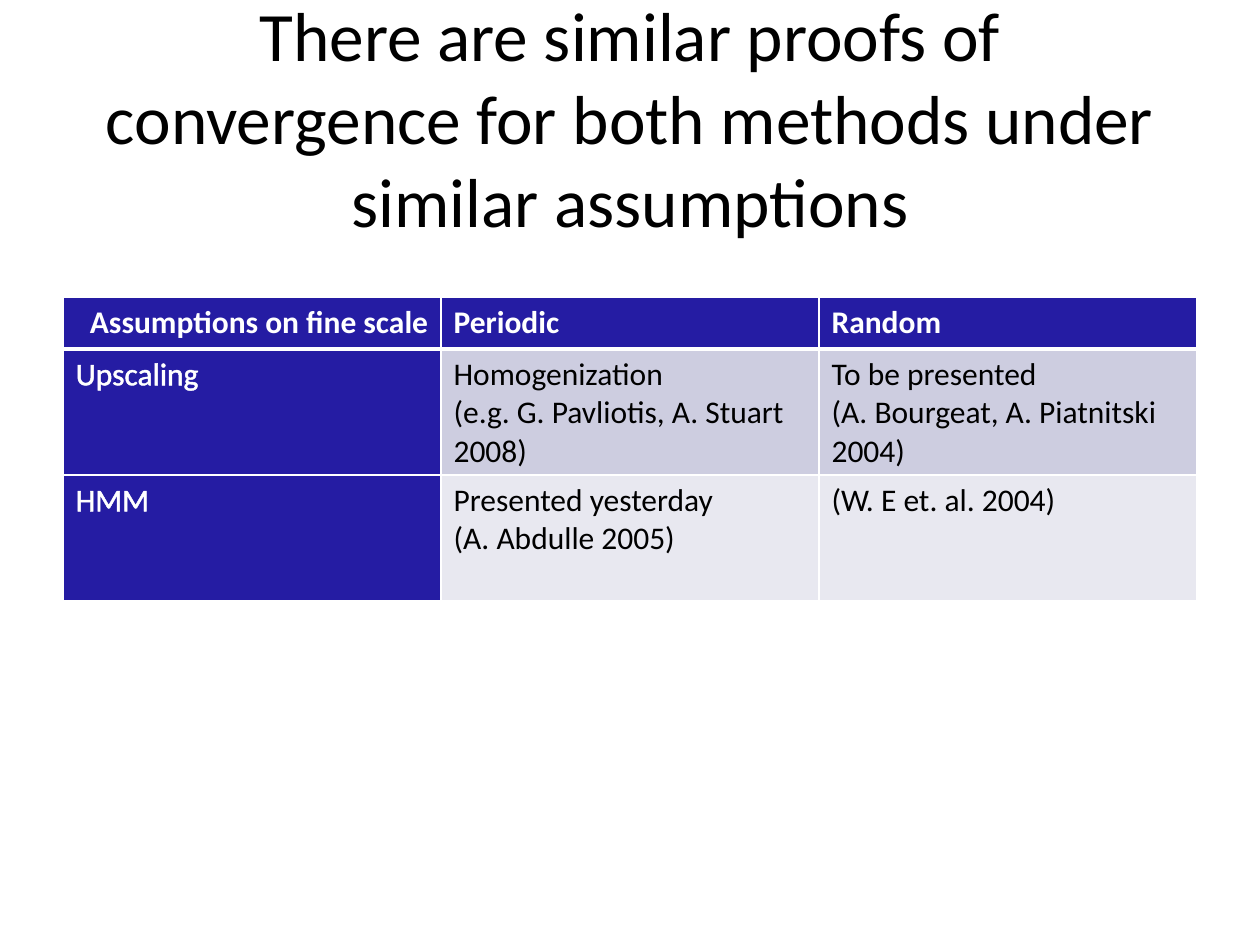
"""Build the slide on convergence proofs with its table of assumptions."""
from lxml import etree
from pptx import Presentation
from pptx.dml.color import RGBColor
from pptx.enum.text import MSO_ANCHOR, PP_ALIGN
from pptx.oxml.ns import qn
from pptx.util import Inches, Pt

LEFT, CENTER, RIGHT = PP_ALIGN.LEFT, PP_ALIGN.CENTER, PP_ALIGN.RIGHT
MIDDLE = MSO_ANCHOR.MIDDLE
WHITE = RGBColor(0xFF, 0xFF, 0xFF)
BLACK = RGBColor(0, 0, 0)
NAVY = RGBColor(0x25, 0x1C, 0xA3)
BANDS = [RGBColor(0xCD, 0xCD, 0xE0), RGBColor(0xE8, 0xE8, 0xF0)]

TITLE = "There are similar proofs of convergence for both methods under similar assumptions"
ROWS = [
    ["Assumptions on fine scale", "Periodic", "Random"],
    ["Upscaling", "Homogenization\n(e.g. G. Pavliotis, A. Stuart 2008)",
     "To be presented\n(A. Bourgeat, A. Piatnitski 2004)"],
    ["HMM", "Presented yesterday\n(A. Abdulle 2005)", "(W. E et. al. 2004)"],
]
HEIGHTS = [0.41, 1, 1]
WIDTH = 9


def make_line(tag, color, width):
    line = etree.Element(qn(tag), w=str(Pt(width)))
    fill = etree.SubElement(line, qn("a:solidFill"))
    etree.SubElement(fill, qn("a:srgbClr"), val=str(color))
    return line


def put_text(frame, text, size=18, color=BLACK, bold=False, align=LEFT, edge=0):
    frame.word_wrap = True
    for i, words in enumerate(text.split("\n")):
        para = frame.add_paragraph() if i else frame.paragraphs[0]
        para.alignment = align
        run = para.add_run()
        run.text = words
        font = run.font
        font.name, font.size, font.bold = "Calibri", Pt(size), bold
        font.color.rgb = color
        if edge:
            run._r.get_or_add_rPr().insert(0, make_line("a:ln", color, edge))


def style_cell(cell, fill, base):
    cell.fill.solid()
    cell.fill.fore_color.rgb = fill
    props = cell._tc.get_or_add_tcPr()
    for i, (side, width) in enumerate(zip("LRTB", (1, 1, 1, base))):
        props.insert(i, make_line("a:ln" + side, WHITE, width))


def main():
    deck = Presentation()
    deck.slide_width, deck.slide_height = Inches(10), Inches(7.5)
    slide = deck.slides.add_slide(deck.slide_layouts[6])

    title = slide.shapes.add_textbox(Inches(0.5), Inches(0.3), Inches(WIDTH), Inches(1.25))
    title.text_frame.vertical_anchor = MIDDLE
    put_text(title.text_frame, TITLE, size=39.6, align=CENTER)

    table = slide.shapes.add_table(
        len(ROWS), len(ROWS[0]), Inches(0.5), Inches(2.36),
        Inches(WIDTH), Inches(sum(HEIGHTS))).table
    for r, (row, height) in enumerate(zip(ROWS, HEIGHTS)):
        table.rows[r].height = Inches(height)
        for c, text in enumerate(row):
            cell = table.cell(r, c)
            head = r == 0
            dark = head or c == 0
            style_cell(cell, NAVY if dark else BANDS[r - 1], 3 if head else 1)
            put_text(cell.text_frame, text, color=WHITE if dark else BLACK, bold=head,
                     align=RIGHT if head and c == 0 else LEFT,
                     edge=1.45 if dark and not head else 0)

    deck.save("out.pptx")


if __name__ == "__main__":
    main()
